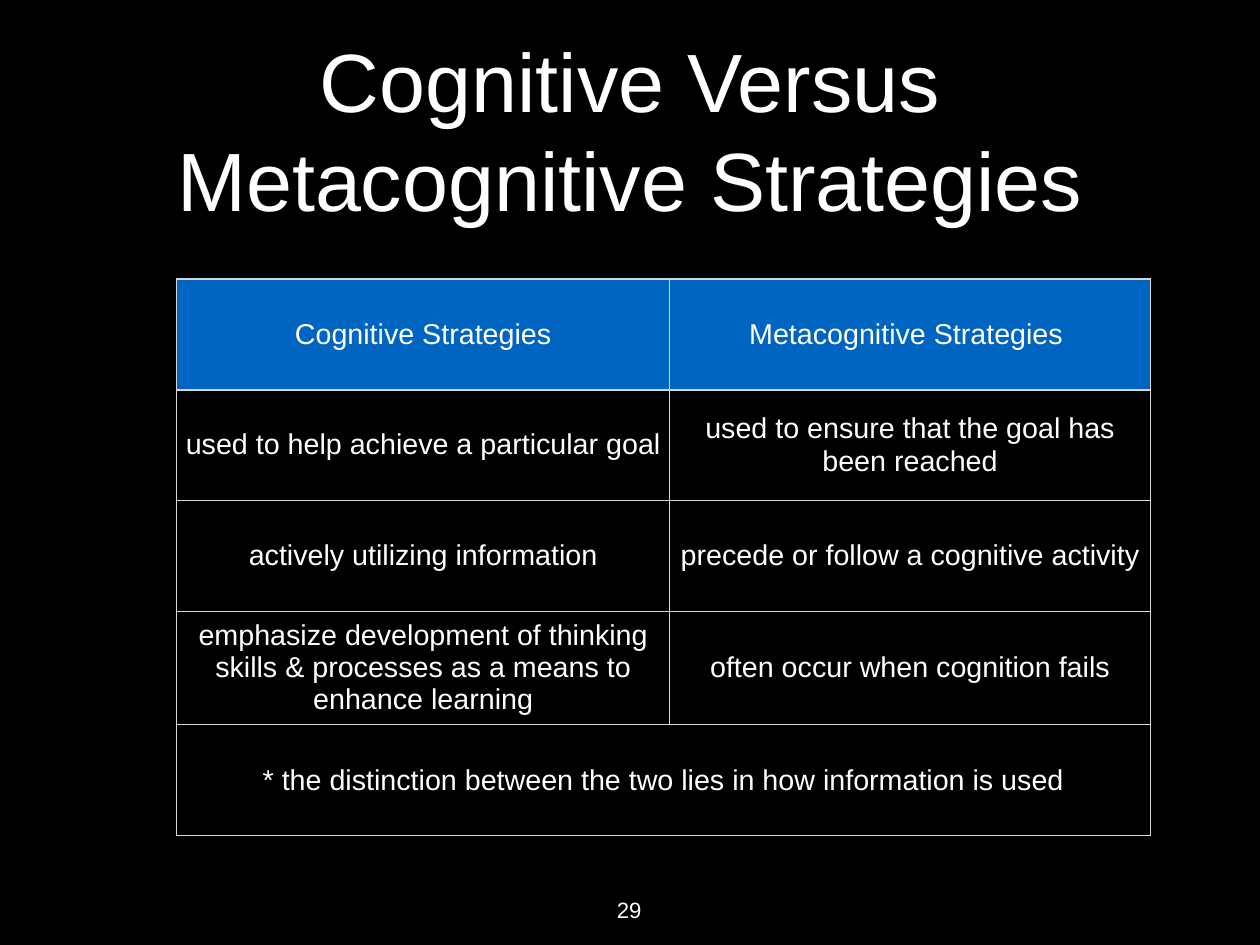
import dataclasses

import pptx
import pptx.dml.color
import pptx.enum.text
import pptx.oxml
import pptx.oxml.ns
import pptx.util

Inches = pptx.util.Inches
Pt = pptx.util.Pt
Anchor = pptx.enum.text.MSO_ANCHOR


@dataclasses.dataclass(frozen=True)
class Theme:
    font: str = "Arial"
    background: str = "000000"
    text: str = "FFFFFF"
    header: str = "0065C1"
    grid: str = "D6D7D6"
    title_size: float = 67.2
    table_size: float = 23.3
    number_size: float = 18
    grid_width: float = 1
    header_rule_width: float = 2
    cell_margin: float = 0.06


def color(value):
    return pptx.dml.color.RGBColor.from_string(value)


def apply_format(target, values):
    for name, value in values.items():
        setattr(target, name, value)


def margins(inset):
    return {f"margin_{side}": Inches(inset)
            for side in ("left", "top", "right", "bottom")}


class SlideBuilder:
    def __init__(self, slide, theme):
        self.slide = slide
        self.theme = theme
        fill = slide.background.fill
        fill.solid()
        fill.fore_color.rgb = color(theme.background)

    def add_text(self, frame, text, size):
        para = frame.paragraphs[0]
        para.alignment = pptx.enum.text.PP_ALIGN.CENTER
        span = para.add_run()
        span.text = text
        apply_format(span.font, {"name": self.theme.font, "size": Pt(size), "bold": False})
        span.font.color.rgb = color(self.theme.text)

    def text_box(self, text, bounds, size, **frame_format):
        box = self.slide.shapes.add_textbox(*map(Inches, bounds))
        apply_format(box.text_frame, {**margins(0), **frame_format})
        self.add_text(box.text_frame, text, size)

    def borders(self, cell, widths):
        properties = cell._tc.get_or_add_tcPr()
        for side in "LRTB":
            properties.append(pptx.oxml.parse_xml(
                f'<a:ln{side} {pptx.oxml.ns.nsdecls("a")} w="{Pt(widths[side])}">'
                f'<a:solidFill><a:srgbClr val="{self.theme.grid}"/></a:solidFill>'
                f'</a:ln{side}>'))

    def table(self, rows, left, top, column_widths, row_height):
        theme = self.theme
        size = (sum(column_widths), row_height * len(rows))
        frame = self.slide.shapes.add_table(
            len(rows), len(column_widths), *map(Inches, (left, top, *size)))
        table = frame.table
        apply_format(table, {"first_row": False, "horz_banding": False})
        for column, width in zip(table.columns, column_widths):
            column.width = Inches(width)
        for index, texts in enumerate(rows):
            table.rows[index].height = Inches(row_height)
            # A row with a single text spans the whole table
            if len(texts) == 1:
                table.cell(index, 0).merge(table.cell(index, len(column_widths) - 1))
            for position in range(len(column_widths)):
                cell = table.cell(index, position)
                widths = dict.fromkeys("LRTB", theme.grid_width)
                if index == 0:
                    widths["B"] = theme.header_rule_width
                elif index == 1:
                    widths["T"] = theme.header_rule_width
                self.borders(cell, widths)
                if index == 0:
                    cell.fill.solid()
                    cell.fill.fore_color.rgb = color(theme.header)
                else:
                    cell.fill.background()
                apply_format(cell, {**margins(theme.cell_margin),
                                    "vertical_anchor": Anchor.MIDDLE})
                if position < len(texts):
                    self.add_text(cell.text_frame, texts[position], theme.table_size)


def main():
    deck = pptx.Presentation()
    deck.slide_width = Inches(14.22)
    deck.slide_height = Inches(10.67)
    theme = Theme()
    page = SlideBuilder(deck.slides.add_slide(deck.slide_layouts[6]), theme)

    # Title
    page.text_box("Cognitive Versus Metacognitive Strategies",
                  (1.04, 0.28, 12.14, 2.36), theme.title_size,
                  word_wrap=True, vertical_anchor=Anchor.MIDDLE)

    # Page number
    page.text_box("29", (6.9, 10.12, 0.4, 0.42), theme.number_size, word_wrap=False)

    # Comparison of the two kinds of strategy
    comparison = [
        ("Cognitive Strategies", "Metacognitive Strategies "),
        ("used to help achieve a particular goal",
         "used to ensure that the goal has been reached"),
        ("actively utilizing information", "precede or follow a cognitive activity"),
        ("emphasize development of thinking skills & processes as a means to "
         "enhance learning",
         "often occur when cognition fails"),
        ("* the distinction between the two lies in how information is used",),
    ]
    page.table(comparison, 1.99, 3.15, (5.57, 5.42), 1.25)

    deck.save("out.pptx")


if __name__ == "__main__":
    main()
